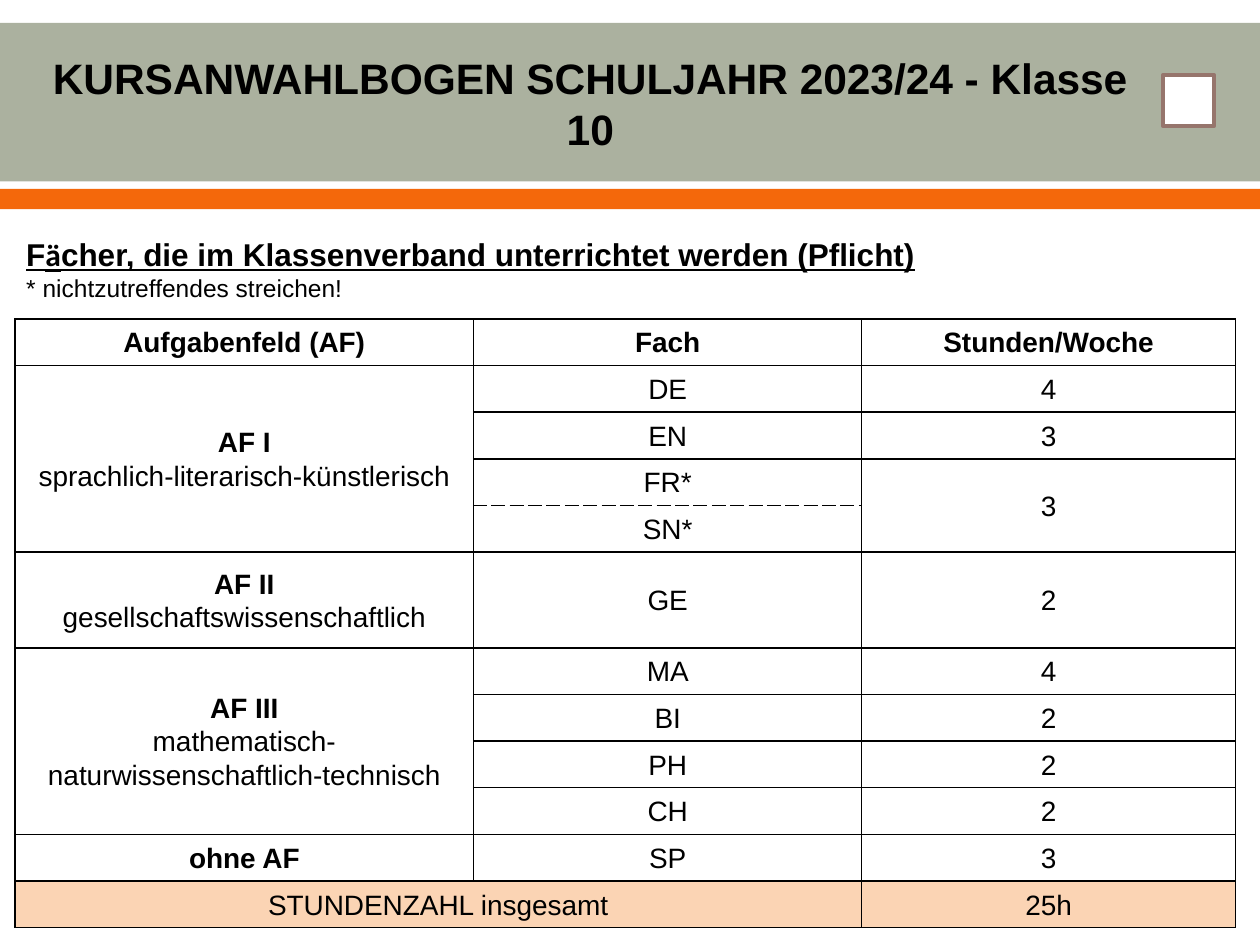
from lxml import etree
from pptx import Presentation
from pptx.dml.color import RGBColor
from pptx.enum.shapes import MSO_SHAPE
from pptx.enum.text import MSO_ANCHOR, PP_ALIGN
from pptx.oxml.ns import qn
from pptx.util import Cm, Pt

RECT = MSO_SHAPE.RECTANGLE
MIDDLE = MSO_ANCHOR.MIDDLE
CENTER = PP_ALIGN.CENTER

COLORS = {
    "black": "000000",
    "white": "FFFFFF",
    "sage": "ABB19F",
    "orange": "F4680B",
    "brown": "96756C",
    "peach": "FBD4B4",
}

COL_WIDTHS = [9.25, 7.82, 7.54]
ROW_HEIGHT = 0.94
TALL_ROW, TALL_HEIGHT = 5, 1.93
ROWS = [
    ("Aufgabenfeld (AF)", "Fach", "Stunden/Woche"),
    ("AF I\nsprachlich-literarisch-künstlerisch", "DE", "4"),
    ("", "EN", "3"),
    ("", "FR*", "3"),
    ("", "SN*", ""),
    ("AF II\ngesellschaftswissenschaftlich", "GE", "2"),
    ("AF III\nmathematisch-\nnaturwissenschaftlich-technisch", "MA", "4"),
    ("", "BI", "2"),
    ("", "PH", "2"),
    ("", "CH", "2"),
    ("ohne AF", "SP", "3"),
    ("STUNDENZAHL insgesamt", "", "25h"),
]
MERGES = [((1, 0), (4, 0)), ((3, 2), (4, 2)), ((6, 0), (9, 0)), ((11, 0), (11, 1))]
DASHED = {(3, 1): "lnB", (4, 1): "lnT"}
TOTAL_ROW = len(ROWS) - 1


def rgb(name):
    return RGBColor.from_string(COLORS[name])


def add_run(p, text, size, bold=False, underline=False, font="Arial"):
    r = p.add_run()
    r.text = text
    r.font.name = font
    r.font.size = Pt(size)
    r.font.bold = bold
    r.font.underline = underline
    r.font.color.rgb = rgb("black")


def add_rect(s, left, top, width, height, fill, line=None):
    sp = s.shapes.add_shape(RECT, Cm(left), Cm(top), Cm(width), Cm(height))
    sp.shadow.inherit = False
    sp.fill.solid()
    sp.fill.fore_color.rgb = rgb(fill)
    if line:
        sp.line.color.rgb = rgb(line)
        sp.line.width = Pt(2.22)
    else:
        sp.line.fill.background()


def add_text_frame(s, left, top, width, height):
    sp = s.shapes.add_textbox(Cm(left), Cm(top), Cm(width), Cm(height))
    tf = sp.text_frame
    tf.word_wrap = True
    return tf


def add_title(s):
    tf = add_text_frame(s, 0.28, 1.52, 23.24, 3.1)
    tf.vertical_anchor = MIDDLE
    tf.margin_bottom = Cm(2.1)
    p = tf.paragraphs[0]
    p.alignment = CENTER
    add_run(p, "KURSANWAHLBOGEN SCHULJAHR 2023/24 - Klasse 10", 24.3, bold=True)


def add_heading(s):
    tf = add_text_frame(s, 0.28, 4.62, 18.82, 1.63)
    p = tf.paragraphs[0]
    add_run(p, "F", 18, True, True)
    add_run(p, "ä", 18, True, True, "Calibri")
    add_run(p, "cher, die im Klassenverband unterrichtet werden (Pflicht)", 18, True, True)
    add_run(tf.add_paragraph(), "* nichtzutreffendes streichen!", 14)


def set_borders(cell, dashed_side):
    tcPr = cell._tc.get_or_add_tcPr()
    for side in ("lnL", "lnR", "lnT", "lnB"):
        ln = etree.SubElement(tcPr, qn(f"a:{side}"), w=str(Pt(1)))
        fill = etree.SubElement(ln, qn("a:solidFill"))
        etree.SubElement(fill, qn("a:srgbClr"), val=COLORS["black"])
        dash = "dash" if side == dashed_side else "solid"
        etree.SubElement(ln, qn("a:prstDash"), val=dash)


def fill_cell(cell, text, row, col):
    set_borders(cell, DASHED.get((row, col)))
    if row == TOTAL_ROW:
        cell.fill.solid()
        cell.fill.fore_color.rgb = rgb("peach")
    else:
        cell.fill.background()
    cell.vertical_anchor = MIDDLE
    cell.margin_left = cell.margin_right = Cm(0.18)
    cell.margin_top = cell.margin_bottom = 0
    tf = cell.text_frame
    for i, line in enumerate(text.split("\n")):
        p = tf.add_paragraph() if i else tf.paragraphs[0]
        p.alignment = CENTER
        p.line_spacing = 1.07
        p.font.size = Pt(16)
        if line:
            bold = row == 0 or (col == 0 and i == 0 and row != TOTAL_ROW)
            add_run(p, line, 16, bold)


def add_course_table(s):
    heights = [TALL_HEIGHT if i == TALL_ROW else ROW_HEIGHT for i in range(len(ROWS))]
    frame = s.shapes.add_table(len(ROWS), len(COL_WIDTHS), Cm(0.3), Cm(6.43),
                               Cm(sum(COL_WIDTHS)), Cm(sum(heights)))
    table = frame.table
    table.first_row = False
    table.horz_banding = False
    for column, width in zip(table.columns, COL_WIDTHS):
        column.width = Cm(width)
    for table_row, height in zip(table.rows, heights):
        table_row.height = Cm(height)
    for row, texts in enumerate(ROWS):
        for col, text in enumerate(texts):
            fill_cell(table.cell(row, col), text, row, col)
    for first, last in MERGES:
        table.cell(*first).merge(table.cell(*last))


def main():
    prs = Presentation()
    prs.slide_width = Cm(25.4)
    prs.slide_height = Cm(19.05)
    s = prs.slides.add_slide(prs.slide_layouts[6])
    add_rect(s, 0, 0.46, 25.4, 3.2, "sage")
    add_rect(s, 0, 3.81, 25.4, 0.41, "orange")
    add_title(s)
    add_rect(s, 23.44, 1.52, 1.04, 1.02, "white", "brown")
    add_heading(s)
    add_course_table(s)
    prs.save("out.pptx")


if __name__ == "__main__":
    main()
